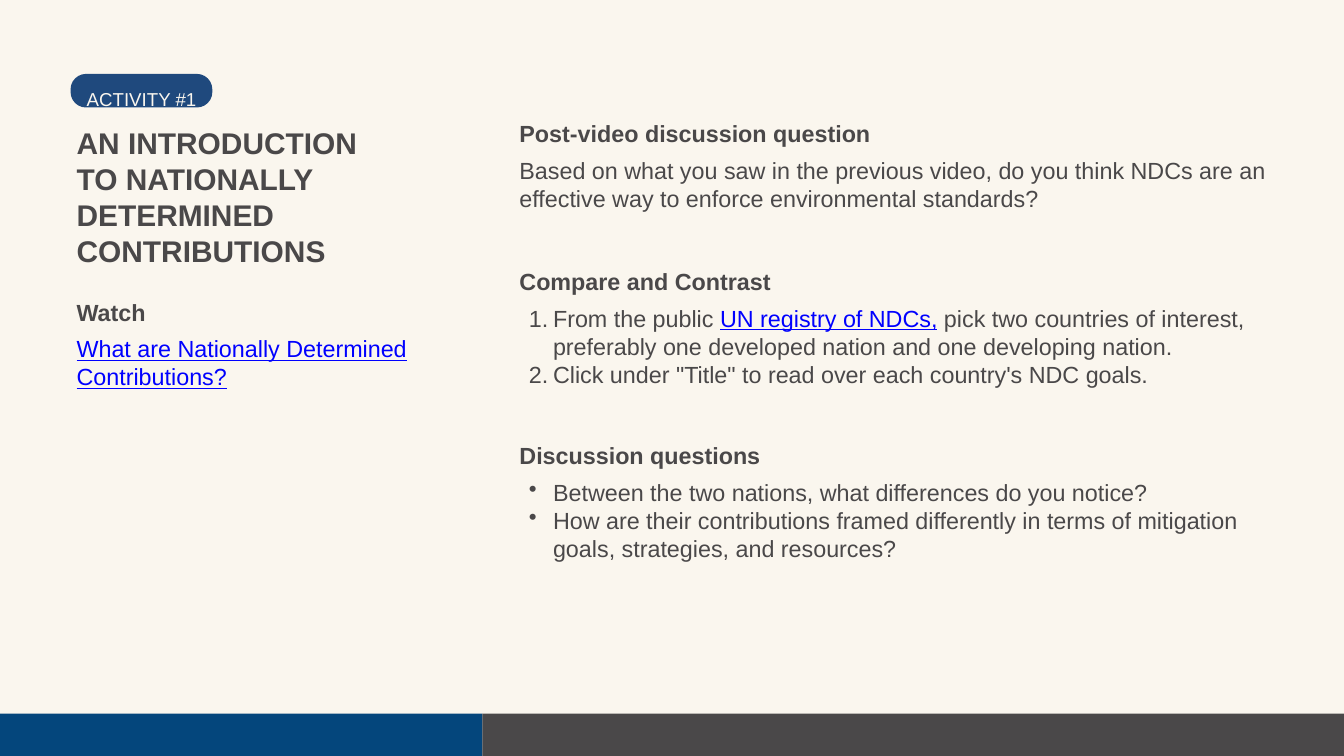
from lxml.etree import SubElement
from pptx import Presentation
from pptx.dml.color import RGBColor
from pptx.enum.shapes import MSO_SHAPE as Shape
from pptx.enum.text import MSO_ANCHOR as Anchor, MSO_AUTO_SIZE as AutoSize, PP_ALIGN as Align
from pptx.oxml.ns import qn
from pptx.util import Inches, Pt

COLORS = {
    "paper": "FAF6EE",
    "ink": "4A4849",
    "navy": "04467C",
    "badge": "1F497D",
    "link": "0000FF",
}
FRAME = {
    "margin_left": 0,
    "margin_top": 0,
    "margin_right": 0,
    "margin_bottom": 0,
    "word_wrap": True,
    "auto_size": AutoSize.NONE,
    "vertical_anchor": Anchor.TOP,
}
HEADING = {"size": Pt(25), "bold": True}
BODY = {"size": Pt(25), "bold": False}
TITLE = {"size": Pt(32), "bold": True}
BADGE = {"size": Pt(20), "bold": False}
LINE = 0.42
BODY_OFFSET = 0.55
NUMBERED = ("buAutoNum", {"type": "arabicPeriod"})
BULLETED = ("buChar", {"char": "•"})


def color(name):
    """Return the named palette colour."""
    return RGBColor.from_string(COLORS[name])


def place(shape, left, top, width, height):
    """Move and size a shape in inches."""
    box = {"left": left, "top": top, "width": width, "height": height}
    for name, value in box.items():
        setattr(shape, name, Inches(value))


def set_marker(para, marker):
    """Give a paragraph a hanging bullet or number."""
    tag, attributes = marker
    properties = para._p.get_or_add_pPr()
    properties.set("marL", str(Inches(0.5)))
    properties.set("indent", str(Inches(-0.36)))
    tint = SubElement(properties, qn("a:buClr"))
    SubElement(tint, qn("a:srgbClr"), val=COLORS["ink"])
    SubElement(properties, qn("a:" + tag), attributes)


def write(shape, paragraphs, style, spacing, ink="ink", marker=None):
    """Fill a shape with paragraphs of (text, is_link) spans."""
    frame = shape.text_frame
    for name, value in FRAME.items():
        setattr(frame, name, value)
    for index, spans in enumerate(paragraphs):
        para = frame.add_paragraph() if index else frame.paragraphs[0]
        para.alignment = Align.LEFT
        para.line_spacing = spacing
        if marker:
            set_marker(para, marker)
        for text, is_link in spans:
            span = para.add_run()
            span.text = text
            for name, value in {"name": "Arial", "underline": is_link, **style}.items():
                setattr(span.font, name, value)
            span.font.color.rgb = color("link" if is_link else ink)


def add_text(page, left, top, width, height, *content, **options):
    """Add a text box at the given place."""
    box = page.shapes.add_textbox(*map(Inches, (left, top, width, height)))
    write(box, *content, **options)


def add_block(page, kind, left, top, width, height, fill):
    """Add a plain filled shape without outline."""
    block = page.shapes.add_shape(kind, *map(Inches, (left, top, width, height)))
    block.shadow.inherit = False
    block.fill.solid()
    block.fill.fore_color.rgb = color(fill)
    block.line.fill.background()
    return block


def add_footer(page, left, top, width, height, split):
    """Add the two-coloured band along the bottom."""
    add_block(page, Shape.RECTANGLE, left, top, split, height, "navy")
    add_block(page, Shape.RECTANGLE, left + split, top, width - split, height, "ink")


def add_title(page, left, top, width, height, text):
    """Move and format the title placeholder."""
    title = page.shapes.title
    place(title, left, top, width, height)
    write(title, [[(text, False)]], TITLE, Pt(38.6))


def add_badge(page, left, top, width, height, text):
    """Add the rounded activity badge and its label."""
    pill = add_block(page, Shape.ROUNDED_RECTANGLE, left, top, width, height, "badge")
    pill.adjustments[0] = 0.46
    add_text(page, left + 0.24, top + 0.08, width - 0.24, 0.34,
             [[(text, False)]], BADGE, 1.4, ink="paper")


def add_section(page, left, top, width, lines, heading, paragraphs, marker=None):
    """Add a bold heading with its body text below."""
    add_text(page, left, top, width, LINE, [[(heading, False)]], HEADING, Pt(30))
    add_text(page, left, top + BODY_OFFSET, width, lines * LINE,
             paragraphs, BODY, Pt(30), marker=marker)


def main():
    """Build the activity slide and save it."""
    deck = Presentation()
    deck.slide_width, deck.slide_height = Inches(20), Inches(11.25)
    page = deck.slides.add_slide(deck.slide_layouts[5])
    page.background.fill.solid()
    page.background.fill.fore_color.rgb = color("paper")

    add_footer(page, 0, 10.62, 20, 0.63, split=7.18)
    add_title(page, 1.14, 1.85, 4.65, 2.15,
              "AN INTRODUCTION TO NATIONALLY DETERMINED CONTRIBUTIONS")
    add_badge(page, 1.05, 1.1, 2.11, 0.5, "ACTIVITY #1")

    add_section(page, 1.14, 4.43, 5.66, 2, "Watch",
                [[("What are Nationally Determined Contributions?", True)]])
    sections = [
        (1.78, 2, "Post-video discussion question", [
            [("Based on what you saw in the previous video, do you think NDCs are an "
              "effective way to enforce environmental standards?", False)],
        ], None),
        (3.97, 3, "Compare and Contrast", [
            [("From the public ", False), ("UN registry of NDCs,", True),
             (" pick two countries of interest, preferably one developed nation "
              "and one developing nation.", False)],
            [("Click under \"Title\" to read over each country's NDC goals.", False)],
        ], NUMBERED),
        (6.57, 3, "Discussion questions", [
            [("Between the two nations, what differences do you notice?", False)],
            [("How are their contributions framed differently in terms of mitigation "
              "goals, strategies, and resources?", False)],
        ], BULLETED),
    ]
    for top, lines, heading, paragraphs, marker in sections:
        add_section(page, 7.73, top, 11.15, lines, heading, paragraphs, marker)

    deck.save("out.pptx")


if __name__ == "__main__":
    main()
